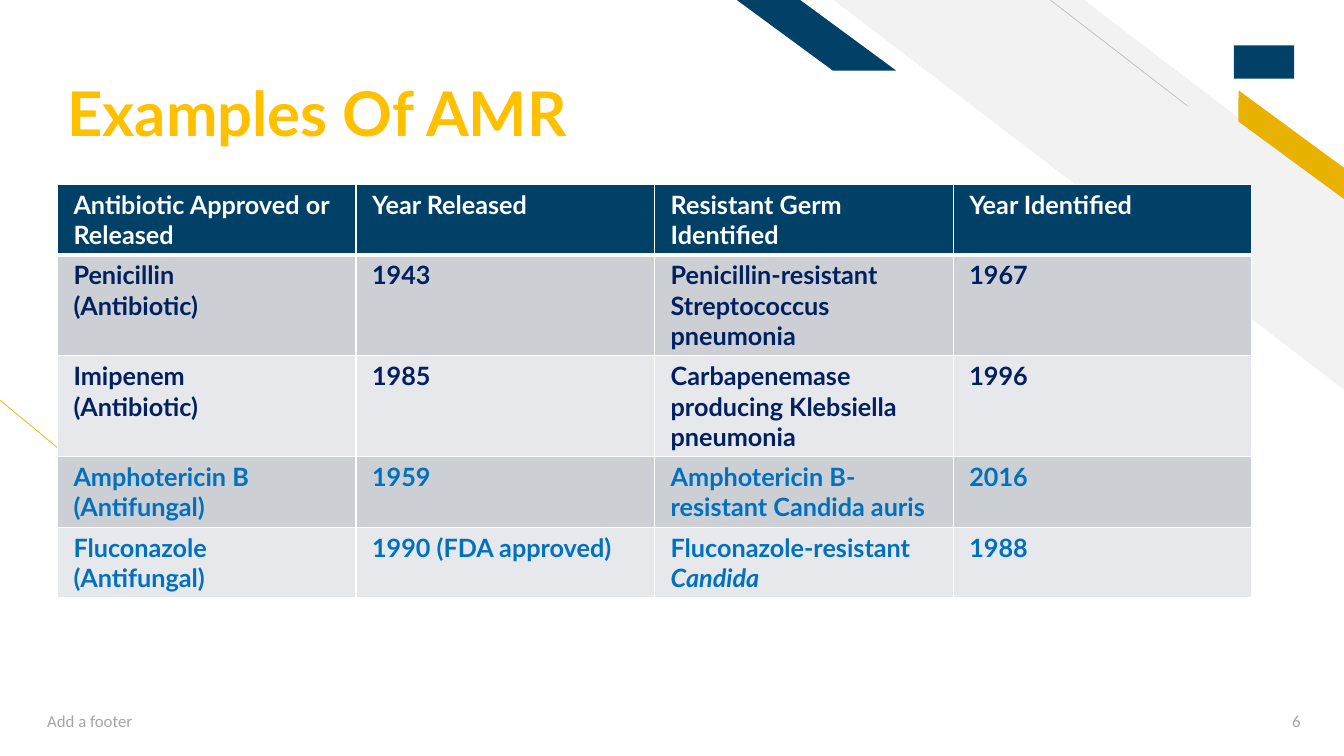
from dataclasses import dataclass

import lxml.etree
import pptx
import pptx.dml.color
import pptx.enum.shapes
import pptx.enum.text
import pptx.oxml.ns
import pptx.util

PRESET = pptx.enum.shapes.MSO_SHAPE
ANCHOR = pptx.enum.text.MSO_ANCHOR
ALIGN = pptx.enum.text.PP_ALIGN
SLIDE_WIDTH = pptx.util.Inches(13.33)
SLIDE_HEIGHT = pptx.util.Inches(7.5)
COLORS = {
    "navy": "014067", "gold": "EAB200", "amber": "FFC000", "white": "FFFFFF",
    "pale": "F2F2F2", "hairline": "BFBFBF", "muted": "A5A5A5",
    "antibiotic": "002060", "antifungal": "0070C0",
    "dark band": "CCCFD3", "light band": "E7E8EB",
}


def across(percent: float) -> int:
    return round(SLIDE_WIDTH * percent / 100)


def down(percent: float) -> int:
    return round(SLIDE_HEIGHT * percent / 100)


def rgb(color: str) -> pptx.dml.color.RGBColor:
    return pptx.dml.color.RGBColor.from_string(COLORS[color])


@dataclass(frozen=True)
class Area:
    """A rectangle in percent of the slide's width and height."""
    left: float
    top: float
    width: float
    height: float

    def emu(self) -> tuple[int, int, int, int]:
        return across(self.left), down(self.top), across(self.width), down(self.height)


@dataclass(frozen=True)
class Decoration:
    preset: int
    area: Area
    color: str
    adjustment: float | None = None
    rotation: float = 0


@dataclass(frozen=True)
class Hairline:
    """A thin line between two points in percent of the slide."""
    start: tuple[float, float]
    end: tuple[float, float]
    color: str


@dataclass(frozen=True)
class Resistance:
    drug: str
    kind: str
    released: str
    germ: str
    identified: str
    germ_italic: str = ""


BACK_LINE = Hairline((15.6, 75.87), (0, 52.93), "gold")
CORNER_LINE = Hairline((88.35, 14), (78.15, 0), "hairline")
BACK_STRIPE = Decoration(PRESET.DIAGONAL_STRIPE, Area(62.03, 0, 38.02, 51.6), "pale", 0.51)
FRONT_DECORATIONS = [
    Decoration(PRESET.PARALLELOGRAM, Area(90.53, 17.47, 11.1, 3.33), "gold", 0.72, 36.3),
    Decoration(PRESET.RECTANGLE, Area(91.8, 6, 4.5, 4.4), "navy"),
    Decoration(PRESET.PARALLELOGRAM, Area(54.83, 0, 11.85, 9.33), "navy", 1.36),
]
TABLE_AREA = Area(4.27, 24.4, 88.87, 54.67)
HEADINGS = ["Antibiotic Approved or Released", "Year Released",
            "Resistant Germ Identified", "Year Identified"]
RESISTANCES = [
    Resistance("Penicillin", "Antibiotic", "1943",
               "Penicillin-resistant Streptococcus pneumonia", "1967"),
    Resistance("Imipenem", "Antibiotic", "1985",
               "Carbapenemase producing Klebsiella pneumonia", "1996"),
    Resistance("Amphotericin B", "Antifungal", "1959",
               "Amphotericin B-resistant Candida auris", "2016"),
    Resistance("Fluconazole", "Antifungal", "1990 (FDA approved)",
               "Fluconazole-resistant ", "1988", "Candida"),
]
ROW_LINES = [2, 3, 3, 2, 2]


def write(frame, text: str, *, color: str, size: float = 18, font: str = "Lato",
          bold: bool = True, align=ALIGN.LEFT, spacing: float = 1.0,
          italic_tail: str = "") -> None:
    """Fill a text frame, one paragraph per line of text."""
    for index, line in enumerate(text.split("\n")):
        paragraph = frame.add_paragraph() if index else frame.paragraphs[0]
        paragraph.alignment = align
        paragraph.line_spacing = spacing
        for words, italic in ((line, False), (italic_tail, True)):
            if words:
                run = paragraph.add_run()
                run.text = words
                run.font.name = font
                run.font.size = pptx.util.Pt(size)
                run.font.bold = bold
                run.font.italic = italic
                run.font.color.rgb = rgb(color)


def add_label(slide, area: Area, text: str, anchor, bottom: float = 0.05, **style) -> None:
    frame = slide.shapes.add_textbox(*area.emu()).text_frame
    frame.word_wrap = True
    frame.vertical_anchor = anchor
    frame.margin_bottom = pptx.util.Inches(bottom)
    write(frame, text, **style)


def add_decoration(slide, part: Decoration) -> None:
    shape = slide.shapes.add_shape(part.preset, *part.area.emu())
    shape.shadow.inherit = False
    shape.fill.solid()
    shape.fill.fore_color.rgb = rgb(part.color)
    shape.line.fill.background()
    shape.rotation = part.rotation
    if part.adjustment is not None:
        shape.adjustments[0] = part.adjustment
        shape.element.spPr.find(pptx.oxml.ns.qn("a:xfrm")).set("flipH", "1")


def add_hairline(slide, part: Hairline) -> None:
    line = slide.shapes.add_connector(
        pptx.enum.shapes.MSO_CONNECTOR.STRAIGHT,
        across(part.start[0]), down(part.start[1]), across(part.end[0]), down(part.end[1]))
    line.line.color.rgb = rgb(part.color)
    line.line.width = pptx.util.Pt(0.5)
    lxml.etree.SubElement(line.element.spPr, pptx.oxml.ns.qn("a:effectLst"))


def set_borders(cell, top: float, bottom: float) -> None:
    """Give a cell white borders, with top and bottom widths in points."""
    properties = cell._tc.get_or_add_tcPr()
    widths = {"a:lnL": 1, "a:lnR": 1, "a:lnT": top, "a:lnB": bottom}
    for position, (tag, width) in enumerate(widths.items()):
        border = lxml.etree.Element(pptx.oxml.ns.qn(tag), w=str(pptx.util.Pt(width)))
        fill = lxml.etree.SubElement(border, pptx.oxml.ns.qn("a:solidFill"))
        lxml.etree.SubElement(fill, pptx.oxml.ns.qn("a:srgbClr"), val=COLORS["white"])
        properties.insert(position, border)


def fill_row(table, row: int, texts: list[str], color: str, band: str,
             germ_italic: str = "") -> None:
    for column, text in enumerate(texts):
        cell = table.cell(row, column)
        cell.margin_left = cell.margin_right = pptx.util.Inches(0.16)
        cell.margin_top = cell.margin_bottom = pptx.util.Inches(0.05)
        cell.fill.solid()
        cell.fill.fore_color.rgb = rgb(band)
        set_borders(cell, top=3 if row == 1 else 1, bottom=3 if row == 0 else 1)
        write(cell.text_frame, text, color=color,
              italic_tail=germ_italic if column == 2 else "")


def add_resistance_table(slide) -> None:
    table = slide.shapes.add_table(len(ROW_LINES), len(HEADINGS), *TABLE_AREA.emu()).table
    for column in table.columns:
        column.width = across(TABLE_AREA.width / len(HEADINGS))
    for row, lines in zip(table.rows, ROW_LINES):
        row.height = down(1.33 + 4 * lines)
    fill_row(table, 0, HEADINGS, "white", "navy")
    for row, item in enumerate(RESISTANCES, start=1):
        texts = [f"{item.drug}\n({item.kind})", item.released, item.germ, item.identified]
        fill_row(table, row, texts, item.kind.lower(),
                 "dark band" if row % 2 else "light band", item.germ_italic)


def main() -> None:
    deck = pptx.Presentation()
    deck.slide_width, deck.slide_height = SLIDE_WIDTH, SLIDE_HEIGHT
    slide = deck.slides.add_slide(deck.slide_layouts[6])

    add_hairline(slide, BACK_LINE)
    add_decoration(slide, BACK_STRIPE)
    add_hairline(slide, CORNER_LINE)
    for part in FRONT_DECORATIONS:
        add_decoration(slide, part)

    footer_style = dict(color="muted", size=12, font="Calibri", bold=False)
    add_label(slide, Area(2.77, 92.67, 33.75, 5.33), "Add a footer", ANCHOR.MIDDLE,
              **footer_style)
    add_label(slide, Area(91.44, 92.67, 6.07, 5.33), "6", ANCHOR.MIDDLE,
              align=ALIGN.RIGHT, **footer_style)
    add_label(slide, Area(4.27, 3.07, 68.32, 16.8), "Examples Of AMR", ANCHOR.BOTTOM,
              bottom=0, color="amber", size=44, spacing=0.9)
    add_resistance_table(slide)
    deck.save("out.pptx")


if __name__ == "__main__":
    main()
